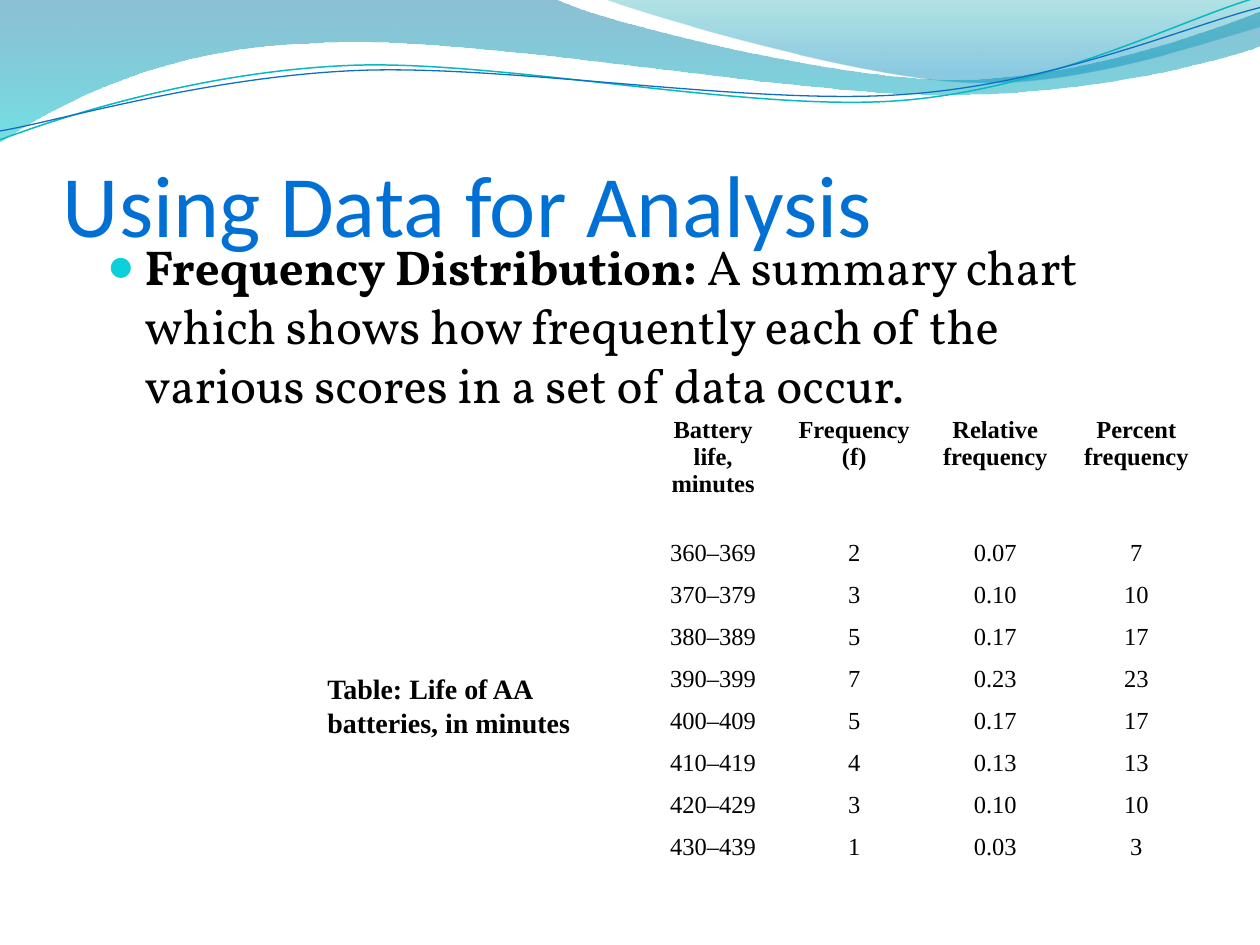
from dataclasses import dataclass
from typing import NamedTuple

from lxml import etree
from pptx import Presentation
from pptx.dml.color import RGBColor
from pptx.enum.text import MSO_ANCHOR, PP_ALIGN
from pptx.oxml.ns import qn
from pptx.util import Inches, Pt

TOP, MIDDLE, BOTTOM = MSO_ANCHOR.TOP, MSO_ANCHOR.MIDDLE, MSO_ANCHOR.BOTTOM
CENTER = PP_ALIGN.CENTER


@dataclass(frozen=True)
class Theme:
    title_color: str = "0070D5"
    text_color: str = "000000"
    bullet_color: str = "0BD0D9"
    title_font: str = "Calibri"
    body_font: str = "Vollkorn"
    table_font: str = "Times New Roman"
    title_size: int = 50
    body_size: int = 28
    caption_size: int = 16
    table_size: int = 14
    spacer_size: int = 4


THEME = Theme()


class Stop(NamedTuple):
    position: float
    color: str
    opacity: int


class Band(NamedTuple):
    outline: list
    stops: tuple


class Wave(NamedTuple):
    outline: list
    color: str
    width: float


class Style(NamedTuple):
    font: str
    size: int
    color: str = THEME.text_color
    bold: bool = False


# An outline is a start point, then lines (x, y) and Bezier curves (six numbers).
BANDS = [
    Band([(0, 0), (4.4, -0.01), (4.76, 0.17, 6.64, 0.63, 7.58, 0.63),
          (8.53, 0.63, 9.58, 0.26, 10, 0.09), (10.01, 0.36),
          (9.83, 0.44, 8.7, 0.76, 7.46, 0.75), (6.22, 0.75, 3.82, 0.28, 2.57, 0.34),
          (1.29, 0.36, 0.46, 0.83, -0.01, 1.13)],
         (Stop(0, "0074A1", 45), Stop(1, "00C6CF", 55))),
    Band([(4.79, -0.01), (5.09, 0.11, 6.82, 0.62, 7.69, 0.65),
          (8.56, 0.69, 9.61, 0.32, 10, 0.21), (10, 0)],
         (Stop(0, "00A1A9", 30), Stop(0.8, "008BBF", 45))),
]
WAVES = [
    Wave([(0, 1.11), (0.48, 0.93, 1.58, 0.57, 2.77, 0.52),
          (3.95, 0.47, 5.93, 0.89, 7.13, 0.8), (8.33, 0.71, 9.38, 0.15, 9.98, -0.02)],
         "0AB8BF", 0.85),
    Wave([(0, 1.04), (0.47, 0.96, 1.64, 0.61, 2.83, 0.56),
          (4.03, 0.51, 5.97, 0.84, 7.17, 0.75), (8.36, 0.67, 9.41, 0.21, 10, 0.06)],
         "0F6FC6", 0.75),
]

HEADERS = ["Battery life, minutes", "Frequency\n(f)", "Relative\nfrequency",
           "Percent\nfrequency"]
BATTERY_LIFE = [
    ("360–369", "2", "0.07", "7"),
    ("370–379", "3", "0.10", "10"),
    ("380–389", "5", "0.17", "17"),
    ("390–399", "7", "0.23", "23"),
    ("400–409", "5", "0.17", "17"),
    ("410–419", "4", "0.13", "13"),
    ("420–429", "3", "0.10", "10"),
    ("430–439", "1", "0.03", "3"),
]
BLANK = ("",) * len(HEADERS)
HEADER_ROW = 1
SPANNING_ROWS = (0, 2, 12)
ROW_HEIGHT, HEADER_HEIGHT, SPACER_HEIGHT = 1 / 3, 0.74, 0.16


def draw_outline(slide, outline: list, close: bool):
    """Build a freeform from all points, then join each curve's three into a Bezier."""
    start, *steps = outline
    points = [(Inches(step[i]), Inches(step[i + 1]))
              for step in steps for i in range(0, len(step), 2)]
    builder = slide.shapes.build_freeform(Inches(start[0]), Inches(start[1]))
    builder.add_line_segments(points, close=close)
    shape = builder.convert_to_shape()
    shape.shadow.inherit = False
    segments = iter(list(shape._element.spPr.iter(qn("a:lnTo"))))
    for step in steps:
        segment = next(segments)
        if len(step) == 6:
            segment.tag = qn("a:cubicBezTo")
            for _ in range(2):
                follower = next(segments)
                segment.append(follower[0])
                follower.getparent().remove(follower)
    return shape


def draw_band(slide, band: Band) -> None:
    shape = draw_outline(slide, band.outline, close=True)
    shape.line.fill.background()
    shape.fill.gradient()
    shape.fill.gradient_angle = 270
    for target, stop in zip(shape.fill.gradient_stops, band.stops):
        target.position = stop.position
        target.color.rgb = RGBColor.from_string(stop.color)
    for color, stop in zip(shape._element.spPr.iter(qn("a:srgbClr")), band.stops):
        etree.SubElement(color, qn("a:alpha"), val=str(stop.opacity * 1000))


def draw_wave(slide, wave: Wave) -> None:
    shape = draw_outline(slide, wave.outline, close=False)
    shape.fill.background()
    shape.line.color.rgb = RGBColor.from_string(wave.color)
    shape.line.width = Pt(wave.width)


def add_run(paragraph, text: str, style: Style) -> None:
    run = paragraph.add_run()
    run.text = text
    run.font.name, run.font.size, run.font.bold = style.font, Pt(style.size), style.bold
    run.font.color.rgb = RGBColor.from_string(style.color)


def add_text(slide, left: float, top: float, width: float, height: float,
             anchor, runs: list[tuple[str, Style]]):
    frame = slide.shapes.add_textbox(Inches(left), Inches(top), Inches(width),
                                     Inches(height)).text_frame
    frame.word_wrap = True
    frame.vertical_anchor = anchor
    for text, style in runs:
        add_run(frame.paragraphs[0], text, style)
    return frame


def add_bullet(paragraph) -> None:
    paragraph.space_before = Pt(6)
    props = paragraph._p.get_or_add_pPr()
    props.set("marL", str(Inches(0.3)))
    props.set("indent", str(Inches(-0.3)))
    color = etree.SubElement(props, qn("a:buClr"))
    etree.SubElement(color, qn("a:srgbClr"), val=THEME.bullet_color)
    etree.SubElement(props, qn("a:buSzPct"), val="95000")
    etree.SubElement(props, qn("a:buFont"), typeface=THEME.table_font)
    etree.SubElement(props, qn("a:buChar"), char="●")


def fill_cell(cell, text: str, style: Style, anchor) -> None:
    cell.fill.background()
    cell.vertical_anchor = anchor
    paragraph = cell.text_frame.paragraphs[0]
    paragraph.alignment = CENTER
    if not text:
        etree.SubElement(paragraph._p, qn("a:endParaRPr"), sz=str(THEME.spacer_size * 100))
        return
    for i, line in enumerate(text.split("\n")):
        if i:
            paragraph.add_line_break()
        add_run(paragraph, line, style)


def draw_frequency_table(slide) -> None:
    rows = [BLANK, HEADERS, BLANK, *BATTERY_LIFE, BLANK, BLANK]
    heights = [ROW_HEIGHT, HEADER_HEIGHT, SPACER_HEIGHT] + [ROW_HEIGHT] * (len(rows) - 3)
    table = slide.shapes.add_table(len(rows), len(HEADERS), Inches(5.1), Inches(2.92),
                                   Inches(4.48), Inches(sum(heights))).table
    table.first_row = table.horz_banding = False
    for r, (values, height) in enumerate(zip(rows, heights)):
        table.rows[r].height = Inches(height)
        is_header = r == HEADER_ROW
        style = Style(THEME.table_font, THEME.table_size, bold=is_header)
        for c, value in enumerate(values):
            fill_cell(table.cell(r, c), value, style, TOP if is_header else MIDDLE)
    for r in SPANNING_ROWS:
        table.cell(r, 0).merge(table.cell(r, len(HEADERS) - 1))


def main() -> None:
    deck = Presentation()
    deck.slide_width, deck.slide_height = Inches(10), Inches(7.5)
    slide = deck.slides.add_slide(deck.slide_layouts[6])
    for band in BANDS:
        draw_band(slide, band)
    for wave in WAVES:
        draw_wave(slide, wave)

    title = add_text(slide, 0.5, 0.77, 9, 1.25, BOTTOM, [
        ("Using Data for Analysis",
         Style(THEME.title_font, THEME.title_size, THEME.title_color))])
    title.margin_left = title.margin_right = title.margin_bottom = 0
    definition = add_text(slide, 0.75, 1.83, 8.5, 4.5, TOP, [
        ("Frequency Distribution: ", Style(THEME.body_font, THEME.body_size, bold=True)),
        ("A summary chart which shows how frequently each of the various scores "
         "in a set of data occur.", Style(THEME.body_font, THEME.body_size))])
    add_bullet(definition.paragraphs[0])
    add_text(slide, 2.5, 5.28, 2.33, 0.64, MIDDLE, [
        ("Table: Life of AA batteries, in minutes",
         Style(THEME.table_font, THEME.caption_size, bold=True))])
    draw_frequency_table(slide)
    deck.save("out.pptx")


if __name__ == "__main__":
    main()
